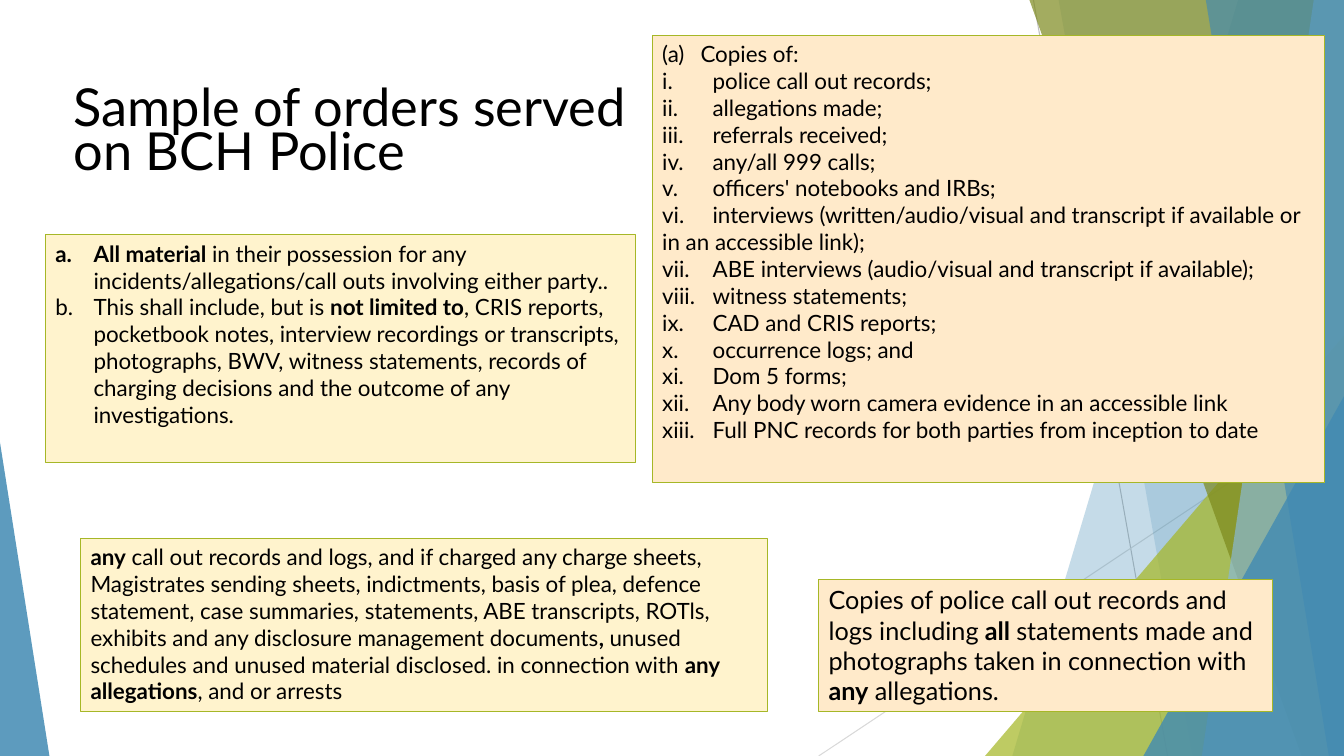
from lxml import etree
from pptx import Presentation
from pptx.dml.color import RGBColor
from pptx.enum.shapes import MSO_CONNECTOR, MSO_SHAPE
from pptx.enum.text import MSO_ANCHOR, MSO_AUTO_SIZE, PP_ALIGN
from pptx.oxml.ns import qn
from pptx.util import Inches, Pt

STRAIGHT = MSO_CONNECTOR.STRAIGHT
TRIANGLE, RECTANGLE = MSO_SHAPE.ISOSCELES_TRIANGLE, MSO_SHAPE.RECTANGLE
TOP, MIDDLE = MSO_ANCHOR.TOP, MSO_ANCHOR.MIDDLE
NO_FIT, LEFT = MSO_AUTO_SIZE.NONE, PP_ALIGN.LEFT

FONT = "Lato"
WIDTH, HEIGHT = 13.33, 7.5
COLOURS = {
    "text": "000000", "blue": "418AB3", "pale blue": "8ABAD4",
    "green": "A6B727", "olive": "7D891D", "grey": "BFBFBF",
    "light grey": "D9D9D9", "cream": "FFF3CD", "peach": "FFEACA",
}

# Decoration: lines, then bands and triangles from back to front
LINES = [((10.25, 0), (11.58, 7.5), "grey"), ((13.33, 4.03), (8.12, 7.5), "light grey")]
# A band runs to the right edge from a top x to a bottom x
BACK_BANDS = [(12.28, 10.04, "blue", 30), (10.5, 11.83, "blue", 20)]
FRONT_BANDS = [(10.21, 12.91, "olive", 70), (13.03, 11.92, "pale blue", 70),
               (11.96, 13.18, "blue", 65)]
# A triangle stands on the bottom edge: left, top, width, apex, colour, opacity
BACK_TRIANGLES = [(9.77, 3.33, 3.56, 1, "green", 72)]
FRONT_TRIANGLES = [(11.34, 3.93, 1.99, 1, "blue", 80), (0, 4.39, 0.49, 0, "blue", 85)]

# Order texts: ** switches bold on and off
MATERIAL = [
    "**All material **in their possession for any incidents/allegations/call outs "
    "involving either party..",
    "This shall include, but is **not limited to**, CRIS reports, pocketbook notes, "
    "interview recordings or transcripts, photographs, BWV, witness statements, "
    "records of charging decisions and the outcome of any investigations.",
]
COPIES = [
    "Copies of:",
    "i.\tpolice call out records;",
    "ii.\tallegations made;",
    "iii.\treferrals received;",
    "iv.\tany/all 999 calls;",
    "v.\tofficers' notebooks and IRBs;",
    "vi.\tinterviews (written/audio/visual and transcript if available or "
    "in an accessible link);",
    "vii.\tABE interviews (audio/visual and transcript if available);",
    "viii.\twitness statements;",
    "ix.\tCAD and CRIS reports;",
    "x.\toccurrence logs; and",
    "xi.\tDom 5 forms;",
    "xii.\tAny body worn camera evidence in an accessible link",
    "xiii.\tFull PNC records for both parties from inception to date",
]
RECORDS = [
    "**any** call out records and logs, and if charged any charge sheets, Magistrates "
    "sending sheets, indictments, basis of plea, defence statement, case summaries, "
    "statements, ABE transcripts, ROTls, exhibits and any disclosure management "
    "documents**, **unused schedules and unused material disclosed. in connection "
    "with **any allegations**, and or arrests",
]
STATEMENTS = [
    "Copies of police call out records and logs including** all **statements made and "
    "photographs taken in connection with **any** allegations.",
]


def colour(name):
    return RGBColor.from_string(COLOURS[name])


def set_all(target, values):
    for name, value in values.items():
        setattr(target, name, value)


def paint(shape, name, opacity=100):
    """Fill a shape, with no line and no shadow."""
    shape.shadow.inherit = False
    shape.fill.solid()
    shape.fill.fore_color.rgb = colour(name)
    shape.line.fill.background()
    if opacity < 100:
        fill = shape._element.spPr.find(qn("a:solidFill"))
        etree.SubElement(fill[0], qn("a:alpha"), val=str(opacity * 1000))


def outline(line, name):
    line.color.rgb = colour(name)
    line.width = Pt(0.75)


def format_span(span, size, bold=False):
    set_all(span.font, {"name": FONT, "size": Pt(size), "bold": bold})
    span.font.color.rgb = colour("text")


def number(para, scheme):
    """Give a paragraph a hanging automatic number."""
    properties = para._p.get_or_add_pPr()
    properties.set("marL", str(Inches(0.38)))
    properties.set("indent", str(Inches(-0.38)))
    etree.SubElement(properties, qn("a:buFont"), typeface="+mj-lt")
    etree.SubElement(properties, qn("a:buAutoNum"), type=scheme)


def draw_bands(page, bands):
    for top_x, bottom_x, name, opacity in bands:
        builder = page.shapes.build_freeform(Inches(top_x), 0)
        corners = [(WIDTH, 0), (WIDTH, HEIGHT), (bottom_x, HEIGHT)]
        builder.add_line_segments([(Inches(x), Inches(y)) for x, y in corners])
        paint(builder.convert_to_shape(), name, opacity)


def draw_triangles(page, triangles):
    for left, top, width, apex, name, opacity in triangles:
        triangle = page.shapes.add_shape(
            TRIANGLE, Inches(left), Inches(top), Inches(width), Inches(HEIGHT - top))
        triangle.adjustments[0] = apex
        paint(triangle, name, opacity)


def draw_decoration(page):
    for start, end, name in LINES:
        line = page.shapes.add_connector(
            STRAIGHT, *[Inches(value) for value in start + end])
        outline(line.line, name)
        etree.SubElement(line._element.spPr, qn("a:effectLst"))
    draw_bands(page, BACK_BANDS)
    draw_triangles(page, BACK_TRIANGLES)
    draw_bands(page, FRONT_BANDS)
    draw_triangles(page, FRONT_TRIANGLES)


def draw_title(page, box, text):
    title = page.shapes.title
    set_all(title, dict(zip(("left", "top", "width", "height"), map(Inches, box))))
    frame = title.text_frame
    set_all(frame, {"text": text, "word_wrap": True, "auto_size": NO_FIT,
                    "vertical_anchor": MIDDLE})
    para = frame.paragraphs[0]
    set_all(para, {"alignment": LEFT, "line_spacing": 0.7})
    for span in para.runs:
        format_span(span, 37.4)


def draw_order(page, box, fill, size, texts, scheme=None, numbered=0):
    """Draw one framed order; its first paragraphs may be numbered."""
    panel = page.shapes.add_shape(RECTANGLE, *map(Inches, box))
    paint(panel, fill)
    outline(panel.line, "green")
    frame = panel.text_frame
    set_all(frame, {"word_wrap": True, "auto_size": NO_FIT, "vertical_anchor": TOP})
    for index, text in enumerate(texts):
        para = frame.add_paragraph() if index else frame.paragraphs[0]
        para.alignment = LEFT
        if index < numbered:
            number(para, scheme)
        for part, words in enumerate(text.split("**")):
            if words:
                span = para.add_run()
                span.text = words
                format_span(span, size, bold=part % 2 == 1)


def main():
    deck = Presentation()
    set_all(deck, {"slide_width": Inches(WIDTH), "slide_height": Inches(HEIGHT)})
    page = deck.slides.add_slide(deck.slide_layouts[5])
    draw_decoration(page)
    draw_order(page, (0.45, 2.33, 5.85, 2.26), "cream", 16, MATERIAL, "alphaLcPeriod", 2)
    draw_order(page, (6.47, 0.35, 6.67, 4.44), "peach", 16, COPIES, "alphaLcParenBoth", 1)
    draw_order(page, (0.8, 5.34, 6.81, 1.72), "cream", 16, RECORDS)
    draw_order(page, (8.12, 5.75, 4.5, 1.31), "peach", 18, STATEMENTS)
    draw_title(page, (0.63, 0.8, 5.85, 1.08), "Sample of orders served\von BCH Police")
    deck.save("out.pptx")


if __name__ == "__main__":
    main()
